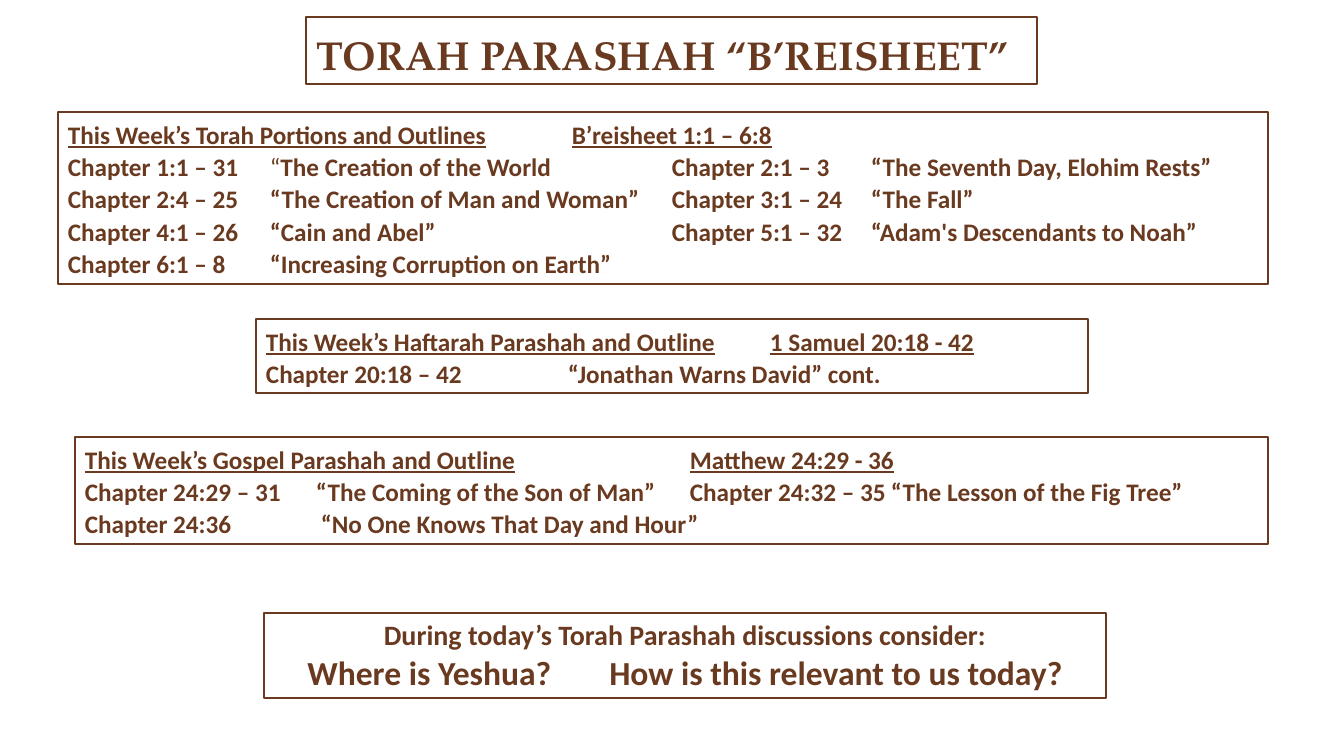
"""Builds the weekly Torah reading slide with its outlined panels."""
from lxml import etree
from pptx import Presentation
from pptx.dml.color import RGBColor
from pptx.enum import shapes, text
from pptx.oxml import ns
from pptx.util import Emu, Pt

BROWN = RGBColor(0x6A, 0x3A, 0x20)
WHITE = RGBColor(0xFF, 0xFF, 0xFF)
PX = 914400 / 100.8
BODY_FONT = "Calibri"
TITLE_FONT = "TeX Gyre Pagella"

TITLE = "TORAH PARASHAH “B’REISHEET”"
TITLE_BOX = (306, 17, 731, 67)

READINGS = [
    {
        "box": (58, 112, 1210, 172),
        "heading": ("This Week’s Torah Portions and Outlines", "B’reisheet 1:1 – 6:8"),
        "heading_tab": 504,
        "rows": [
            ((202, 604, 803), [("Chapter 1:1 – 31", True), ("\t“", False),
                               ("The Creation of the World\tChapter 2:1 – 3\t“The Seventh Day, Elohim Rests”", True)]),
            ((202, 604, 803), [("Chapter 2:4 – 25\t“The Creation of Man and Woman”\tChapter 3:1 – 24\t“The Fall”", True)]),
            ((202, 604, 803), [("Chapter 4:1 – 26\t“Cain and Abel”\tChapter 5:1 – 32\t“Adam's Descendants to Noah”", True)]),
            ((202,), [("Chapter 6:1 – 8\t“Increasing Corruption on Earth”", True)]),
        ],
    },
    {
        "box": (256, 319, 832, 74),
        "heading": ("This Week’s Haftarah Parashah and Outline", "1 Samuel 20:18 - 42"),
        "heading_tab": 504,
        "rows": [((302,), [("Chapter 20:18 – 42\t“Jonathan Warns David” cont.", True)])],
    },
    {
        "box": (75, 437, 1193, 107),
        "heading": ("This Week’s Gospel Parashah and Outline", "Matthew 24:29 - 36"),
        "heading_tab": 605,
        "rows": [
            ((231, 605, 806), [("Chapter 24:29 – 31\t“The Coming of the Son of Man”\t"
                                "Chapter 24:32 – 35\t“The Lesson of the Fig Tree”", True)]),
            ((236,), [("Chapter 24:36\t“No One Knows That Day and Hour”", True)]),
        ],
    },
]

QUESTION_BOX = (264, 613, 842, 85)
QUESTIONS = [
    ((), "During today’s Torah Parashah discussions consider:", 20),
    ((302,), "Where is Yeshua?\tHow is this relevant to us today?", 24),
]


def px(length):
    return Emu(round(length * PX))


def outline(shape, line_width):
    shape.fill.solid()
    shape.fill.fore_color.rgb = WHITE
    shape.line.color.rgb = BROWN
    shape.line.width = Pt(line_width)


def add_panel(page, box, line_width=1):
    panel = page.shapes.add_shape(shapes.MSO_SHAPE.RECTANGLE, *map(px, box))
    panel.shadow.inherit = False
    outline(panel, line_width)
    frame = panel.text_frame
    frame.word_wrap = True
    frame.vertical_anchor = text.MSO_ANCHOR.TOP
    return frame


def add_para(frame, number, stops, align=text.PP_ALIGN.LEFT, spacing=1.0):
    para = frame.add_paragraph() if number else frame.paragraphs[0]
    para.alignment = align
    para.line_spacing = spacing
    if stops:
        tabs = etree.SubElement(para._p.get_or_add_pPr(), ns.qn("a:tabLst"))
        for stop in stops:
            etree.SubElement(tabs, ns.qn("a:tab"), pos=str(px(stop)), algn="l")
    return para


def add_span(para, words, size=18, bold=True, underline=False, font=BODY_FONT):
    span = para.add_run()
    span.text = words
    span.font.name = font
    span.font.size = Pt(size)
    span.font.bold = bold
    span.font.underline = underline
    span.font.color.rgb = BROWN


def add_title(page):
    title = page.shapes.title
    title.left, title.top, title.width, title.height = map(px, TITLE_BOX)
    outline(title, 1)
    frame = title.text_frame
    frame.word_wrap = True
    frame.auto_size = text.MSO_AUTO_SIZE.NONE
    frame.vertical_anchor = text.MSO_ANCHOR.BOTTOM
    add_span(add_para(frame, 0, ()), TITLE, 28.8, font=TITLE_FONT)


def add_reading(page, reading):
    frame = add_panel(page, reading["box"])
    heading = add_para(frame, 0, (reading["heading_tab"],), spacing=1.07)
    name, passage = reading["heading"]
    add_span(heading, name, underline=True)
    add_span(heading, "\t")
    add_span(heading, passage, underline=True)
    for number, (stops, spans) in enumerate(reading["rows"], 1):
        para = add_para(frame, number, stops, spacing=1.07)
        for words, bold in spans:
            add_span(para, words, bold=bold)


def main():
    deck = Presentation()
    deck.slide_width, deck.slide_height = px(1344), px(756)
    page = deck.slides.add_slide(deck.slide_layouts[5])
    add_title(page)
    for reading in READINGS:
        add_reading(page, reading)
    frame = add_panel(page, QUESTION_BOX, 1.5)
    for number, (stops, words, size) in enumerate(QUESTIONS):
        add_span(add_para(frame, number, stops, text.PP_ALIGN.CENTER), words, size)
    deck.save("out.pptx")


if __name__ == "__main__":
    main()
